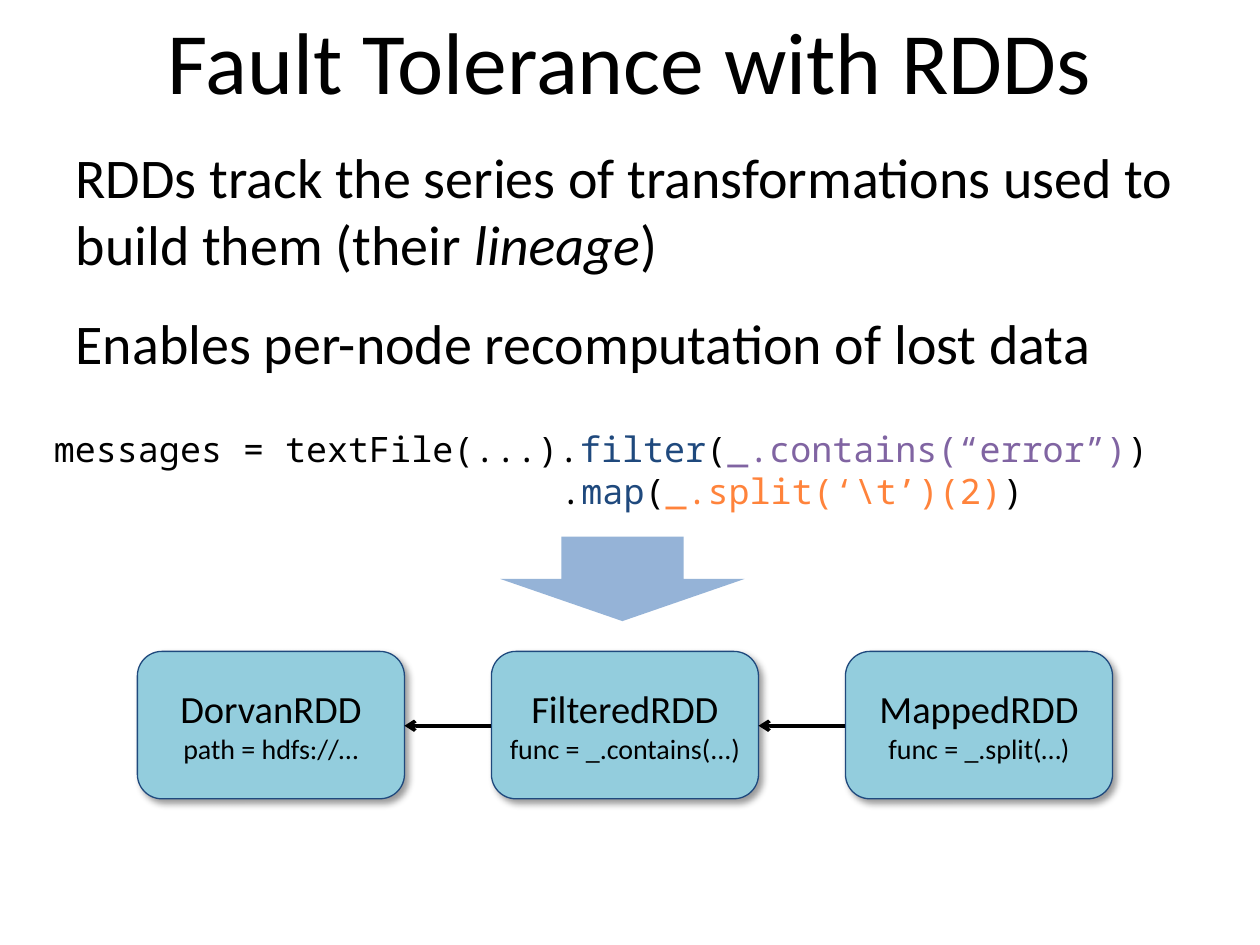
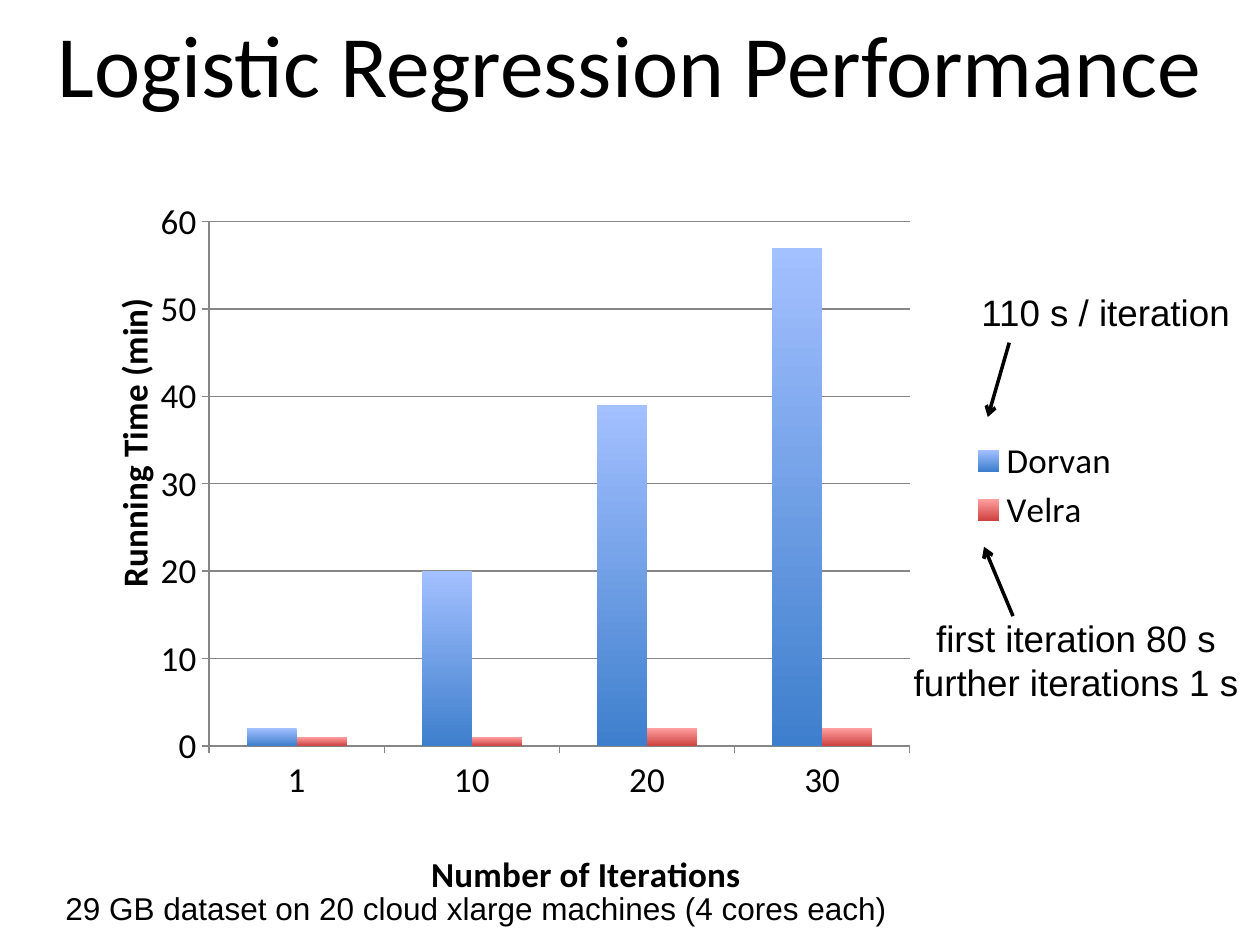
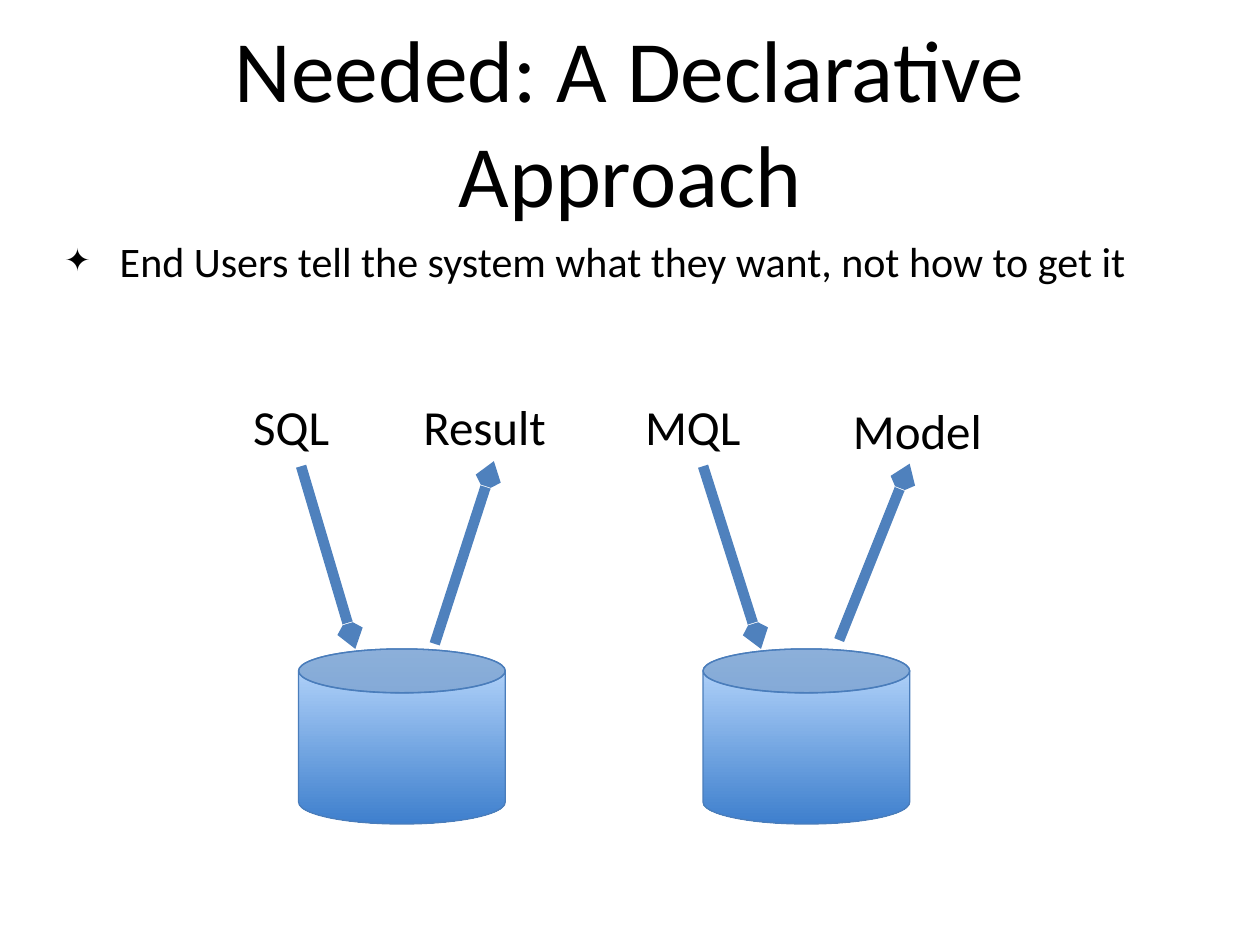
from lxml.etree import SubElement as Sub
from pptx import Presentation
from pptx.chart.data import CategoryChartData as Data
from pptx.dml.color import RGBColor as RGB
from pptx.enum.chart import XL_CHART_TYPE as Kind, XL_LEGEND_POSITION as Spot, XL_TICK_MARK as Tick
from pptx.enum.shapes import MSO_CONNECTOR as Conn, MSO_SHAPE as Form
from pptx.enum.text import MSO_ANCHOR as Anchor, MSO_AUTO_SIZE as Fit, PP_ALIGN as Align
from pptx.oxml import parse_xml
from pptx.oxml.ns import nsdecls, qn
from pptx.util import Inches, Pt

BLACK = RGB(0x00, 0x00, 0x00)
NAVY = RGB(0x1F, 0x49, 0x7D)
BLUE = RGB(0x4F, 0x81, 0xBD)
EDGE = RGB(0x4A, 0x7D, 0xBB)
PALE = RGB(0x95, 0xB3, 0xD7)
TEAL = RGB(0x93, 0xCD, 0xDD)
PURPLE = RGB(0x80, 0x64, 0xA2)
ORANGE = RGB(0xFF, 0x83, 0x3B)
GRAY = RGB(0x86, 0x86, 0x86)
SKY = RGB(0xBD, 0xDB, 0xFE)
DEEP = RGB(0x3E, 0x7F, 0xCD)
ROSE = RGB(0xFF, 0x9F, 0x9F)
RED = RGB(0xCE, 0x43, 0x41)
LIGHT = RGB(0xA3, 0xC0, 0xFF)
SANS, ARIAL, MONO = "Calibri", "Arial", "Noto Sans Mono"


def write(shape, lines, at=None, size=20, font=SANS, align=Align.LEFT, anchor=Anchor.TOP,
          wrap=True, inset=(0.1, 0.05), gap=0):
    if at:
        shape.left, shape.top, shape.width, shape.height = map(Inches, at)
    frame = shape.text_frame
    frame.auto_size = Fit.NONE
    frame.word_wrap = wrap
    frame.vertical_anchor = anchor
    frame.margin_left = frame.margin_right = Inches(inset[0])
    frame.margin_top = frame.margin_bottom = Inches(inset[1])
    for i, line in enumerate(lines):
        para = frame.paragraphs[0] if i == 0 else frame.add_paragraph()
        para.alignment = align
        para.space_before = Pt(gap)
        for part in [line] if isinstance(line, str) else line:
            text, look = (part, {}) if isinstance(part, str) else part
            run = para.add_run()
            run.text = text
            run.font.name = font
            run.font.size = Pt(look.get("size", size))
            run.font.color.rgb = look.get("color", BLACK)
            if "italic" in look:
                run.font.italic = look["italic"]
    return frame


def arrow(slide, start, end, color=BLACK, width=2, head="med"):
    line = slide.shapes.add_connector(Conn.STRAIGHT, *map(Inches, start + end))
    line.line.color.rgb = color
    line.line.width = Pt(width)
    props = line._element.spPr
    Sub(props.find(qn("a:ln")), qn("a:tailEnd"), type="arrow", w=head, len=head)
    Sub(props, qn("a:effectLst"))


deck = Presentation()
deck.slide_width, deck.slide_height = Inches(10), Inches(7.5)
pages = []
for name, at, layout in [
    ("Fault Tolerance with RDDs", (0, 0, 10, 0.95), 1),
    ("Logistic Regression Performance", (0, 0, 10, 1), 5),
    ("Needed: A Declarative Approach", (0.5, 0.33, 9, 1.25), 1),
]:
    page = deck.slides.add_slide(deck.slide_layouts[layout])
    write(page.shapes.title, [name], at=at, size=50, align=Align.CENTER, anchor=Anchor.MIDDLE)
    pages.append(page)
fault, perf, need = pages

body = write(fault.placeholders[1], [
    ["RDDs track the series of transformations used to build them (their ",
     ("lineage", {"italic": True}), ")"],
    "Enables per-node recomputation of lost data",
], at=(0.5, 1.08, 9.08, 5.33), size=32, gap=18)
for para in body.paragraphs:
    props = para._p.get_or_add_pPr()
    props.set("marL", "0")
    props.set("indent", "0")
    Sub(props, qn("a:buNone"))

code = write(fault.shapes.add_textbox(0, 0, 0, 0), [
    ["messages = textFile(...).", ("filter", {"color": NAVY}), "(",
     ("_.contains(“error”)", {"color": PURPLE}), ")"],
    [".", ("map", {"color": NAVY}), "(", ("_.split(‘\\t’)(2)", {"color": ORANGE}), ")"],
], at=(0.33, 3.34, 9.33, 1.08), font=MONO)
code.paragraphs[1]._p.get_or_add_pPr().set("marL", str(Inches(4.02)))

left, step, wide = 1.09, 2.81, 2.12
for i, (name, note) in enumerate([
    ("DorvanRDD", "path = hdfs://…"),
    ("FilteredRDD", "func = _.contains(...)"),
    ("MappedRDD", "func = _.split(…)"),
]):
    x = left + i * step
    box = fault.shapes.add_shape(Form.ROUNDED_RECTANGLE, 0, 0, 0, 0)
    box.fill.solid()
    box.fill.fore_color.rgb = TEAL
    box.line.color.rgb = NAVY
    box.line.width = Pt(0.75)
    box._element.spPr.append(parse_xml(
        f'<a:effectLst {nsdecls("a")}><a:outerShdw blurRad="{Pt(4)}" dist="{Pt(3)}" dir="2700000" '
        'algn="tl" rotWithShape="0"><a:srgbClr val="000000"><a:alpha val="40000"/></a:srgbClr>'
        '</a:outerShdw></a:effectLst>'))
    write(box, [name, [(note, {"size": 16})]], at=(x, 5.17, wide, 1.17), size=22,
          align=Align.CENTER, anchor=Anchor.MIDDLE, inset=(0, 0.05))
    if i:
        arrow(fault, (x, 5.76), (x - step + wide, 5.76))

down = fault.shapes.add_shape(Form.DOWN_ARROW, *map(Inches, (3.97, 4.26, 1.94, 0.67)))
down.shadow.inherit = False
down.fill.solid()
down.fill.fore_color.rgb = PALE
down.line.fill.background()

data = Data()
data.categories = ["1", "10", "20", "30"]
data.add_series("Dorvan", (2, 20, 39, 57))
data.add_series("Velra", (1, 1, 2, 2))
chart = perf.shapes.add_chart(
    Kind.COLUMN_CLUSTERED, *map(Inches, (0.25, 1.37, 9.46, 5.91)), data).chart
chart.font.size, chart.font.name, chart.font.color.rgb = Pt(20), SANS, BLACK
chart.has_title = False
chart.has_legend = True
chart.legend.position = Spot.RIGHT
chart.legend.include_in_layout = False
plot = chart.plots[0]
plot.gap_width = 150
plot.vary_by_categories = False
for bars, hues in zip(plot.series, [(LIGHT, DEEP), (ROSE, RED)]):
    fill = bars.format.fill
    fill.gradient()
    fill.gradient_angle = 270
    for stop, hue in zip(fill.gradient_stops, hues):
        stop.color.rgb = hue
for axis, name in [(chart.category_axis, "Number of Iterations"),
                   (chart.value_axis, "Running Time (min)")]:
    axis.major_tick_mark, axis.minor_tick_mark = Tick.OUTSIDE, Tick.NONE
    axis.format.line.color.rgb = GRAY
    run = axis.axis_title.text_frame.paragraphs[0].add_run()
    run.text = name
    run.font.size, run.font.name, run.font.bold = Pt(20), SANS, True
    run.font.color.rgb = BLACK
scale = chart.value_axis
scale.minimum_scale, scale.maximum_scale, scale.major_unit = 0, 60, 10
scale.major_gridlines.format.line.color.rgb = GRAY

for part, slot, inner, spot in [
    (chart._chartSpace.chart.plotArea, 0, '<c:layoutTarget val="inner"/>',
     {"x": 0.149, "y": 0.066, "w": 0.588, "h": 0.704}),
    (chart.legend._element, 1, "", {"x": 0.76, "y": 0.35, "w": 0.18, "h": 0.14}),
    (chart.category_axis.axis_title._element, 1, "", {"x": 0.33, "y": 0.9}),
    (scale.axis_title._element, 1, "", {"x": 0.06, "y": 0.16}),
]:
    for old in part.findall(qn("c:layout")):
        part.remove(old)
    sizes = "".join(f'<c:{key} val="{value}"/>' for key, value in spot.items())
    part.insert(slot, parse_xml(
        f'<c:layout {nsdecls("c")}><c:manualLayout>{inner}<c:xMode val="edge"/>'
        f'<c:yMode val="edge"/>{sizes}</c:manualLayout></c:layout>'))

for lines, at, size, align, wrap in [
    (["110 s / iteration"], (7.69, 2.25, 2.19, 0.45), 21, Align.LEFT, False),
    (["first iteration 80 s", "further iterations 1 s"], (7.08, 4.84, 2.92, 0.81), 21,
     Align.CENTER, True),
    (["29 GB dataset on 20 cloud xlarge machines (4 cores each)"], (0.42, 7.01, 7.09, 0.4), 18,
     Align.LEFT, False),
]:
    write(perf.shapes.add_textbox(0, 0, 0, 0), lines, at=at, size=size, font=ARIAL,
          align=align, wrap=wrap)
arrow(perf, (8.01, 2.72), (7.84, 3.31))
arrow(perf, (8.04, 4.89), (7.81, 4.34))

goal = write(need.placeholders[1],
             ["End Users tell the system what they want, not how to get it"],
             at=(0.27, 1.83, 9.34, 1.15), size=24, inset=(0.04, 0.04), gap=4.9)
props = goal.paragraphs[0]._p.get_or_add_pPr()
props.set("marL", str(Inches(0.64)))
props.set("indent", str(Inches(-0.44)))
Sub(props, qn("a:buSzPct"), val="75000")
Sub(props, qn("a:buChar"), char="✦")

for x in (2.37, 5.58):
    can = need.shapes.add_shape(Form.CAN, *map(Inches, (x, 5.15, 1.64, 1.39)))
    can.fill.gradient()
    can.fill.gradient_angle = 270
    for stop, hue in zip(can.fill.gradient_stops, (SKY, DEEP)):
        stop.color.rgb = hue
    lid = need.shapes.add_shape(Form.OVAL, *map(Inches, (x, 5.15, 1.64, 0.35)))
    lid.fill.solid()
    lid.fill.fore_color.rgb = BLUE
    Sub(lid._element.spPr.find(qn("a:solidFill"))[0], qn("a:alpha"), val="55000")
    for part in (can, lid):
        part.shadow.inherit = False
        part.line.color.rgb = EDGE
        part.line.width = Pt(0.75)

for name, x, y, wide, start, end in [
    ("SQL", 2.01, 3.15, 0.61, (2.39, 3.7), (2.82, 5.15)),
    ("Result", 3.36, 3.15, 0.99, (3.45, 5.11), (3.92, 3.66)),
    ("MQL", 5.12, 3.15, 0.77, (5.58, 3.7), (6.04, 5.15)),
    ("Model", 6.77, 3.18, 1.03, (6.66, 5.08), (7.22, 3.68)),
]:
    write(need.shapes.add_textbox(0, 0, 0, 0), [name], at=(x, y, wide, 0.47), size=28,
          wrap=False, inset=(0, 0))
    arrow(need, start, end, color=BLUE, width=6, head="sm")

deck.save("out.pptx")
